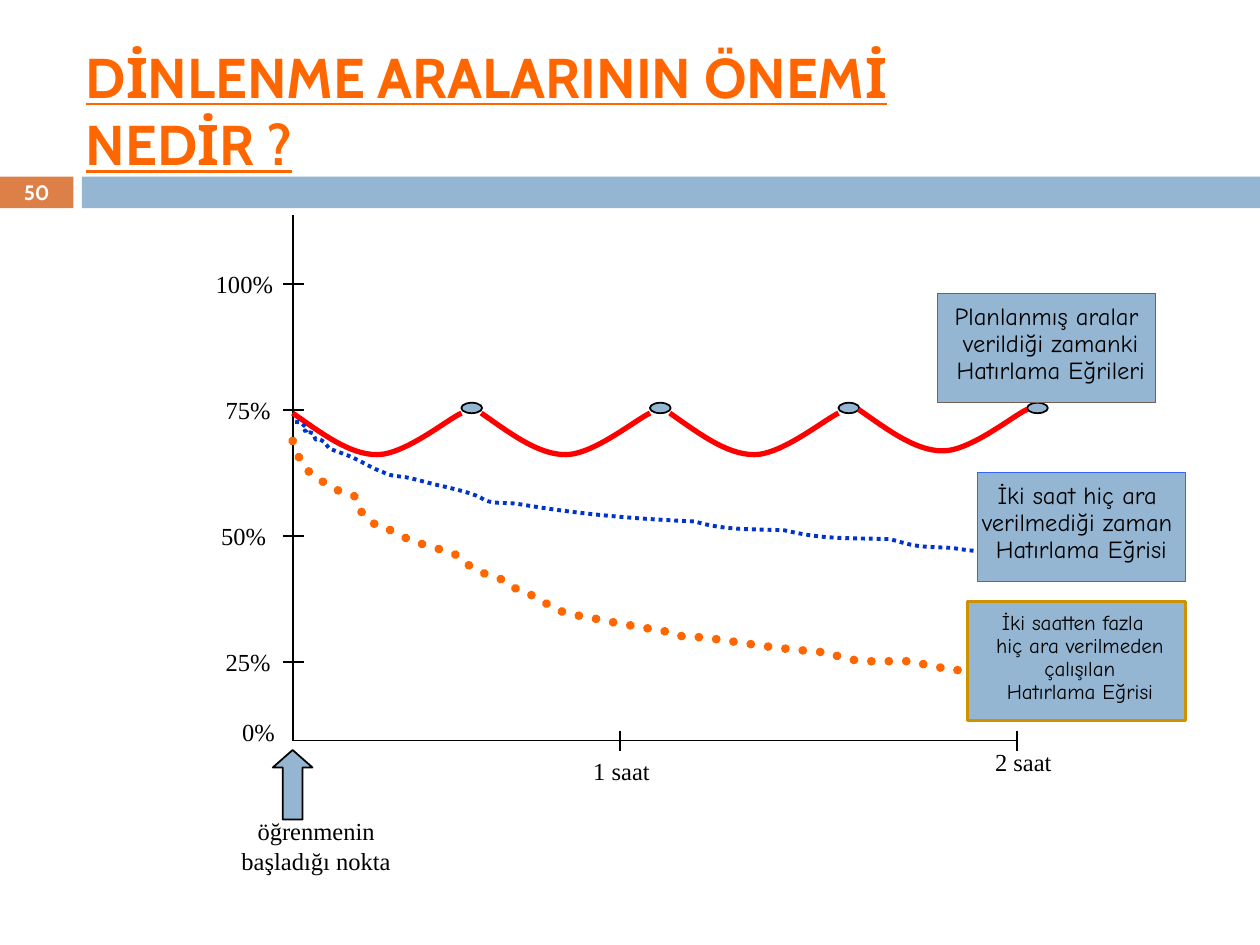
import pptx
import pptx.util
import pptx.dml.color
import pptx.enum.dml
import pptx.enum.shapes
import pptx.enum.text
import pptx.oxml.ns
import lxml.etree

Cm = pptx.util.Cm
Pt = pptx.util.Pt
qn = pptx.oxml.ns.qn
SHAPE = pptx.enum.shapes.MSO_SHAPE
ALIGN = pptx.enum.text.PP_ALIGN
ANCHOR = pptx.enum.text.MSO_ANCHOR

BLUE, BLACK, ORANGE = "94B6D2", "000000", "FF6600"
SERIF, HEADING, HAND = "Times New Roman", "Cabin", "Comic Neue"
UNIT = 0.0254  # cm per step of the curve grid

# Each curve: a start point, then cubic segments (two controls and an end point),
# counted in grid steps from the top of the vertical axis.
WAVE = [(0, 157), (23, 173, 45, 190, 67, 190), (89, 190, 123, 162, 134, 157)]
WAVE_STEP, WAVE_RISES = 149.67, (0, 0, 0, 3)
TWO_HOURS = [
    (2, 164), (4, 164, 7, 164, 8, 166), (19, 175, 0, 168, 16, 173),
    (21, 184, 15, 173, 25, 180), (27, 181, 27, 184, 29, 185),
    (33, 187, 43, 190, 47, 192), (56, 196, 63, 201, 72, 204),
    (77, 207, 84, 207, 90, 208), (100, 210, 109, 213, 119, 215),
    (127, 217, 141, 220, 149, 224), (151, 225, 153, 227, 155, 227),
    (163, 229, 170, 228, 178, 229), (225, 237, 270, 241, 319, 243),
    (342, 250, 363, 249, 390, 250), (421, 257, 432, 256, 474, 257),
    (495, 263, 495, 263, 523, 264), (544, 267, 532, 266, 559, 266)]
OVER_TWO_HOURS = [
    (0, 179), (6, 198, 12, 206, 29, 214), (32, 215, 34, 217, 37, 219),
    (41, 220, 49, 223, 49, 223), (52, 232, 53, 236, 61, 240),
    (68, 251, 70, 246, 80, 251), (96, 261, 114, 263, 131, 270),
    (141, 281, 153, 285, 166, 289), (174, 296, 179, 297, 188, 300),
    (190, 302, 192, 304, 194, 305), (198, 307, 206, 310, 206, 310),
    (215, 317, 224, 317, 235, 319), (257, 324, 278, 327, 300, 331),
    (316, 337, 301, 332, 333, 336), (356, 339, 378, 343, 402, 345),
    (410, 346, 425, 347, 425, 347), (449, 357, 462, 353, 494, 354),
    (503, 358, 513, 358, 523, 361), (535, 361, 559, 359, 559, 359)]


def rgb(value):
    return pptx.dml.color.RGBColor.from_string(value)


def write(shape, text, size, font, color=BLACK, align=ALIGN.LEFT, anchor=ANCHOR.TOP,
          wrap=True, bold=False, underline=False, line_spacing=None, before=0):
    frame = shape.text_frame
    frame.word_wrap = wrap
    frame.vertical_anchor = anchor
    for index, line in enumerate(text.split("\n")):
        paragraph = frame.add_paragraph() if index else frame.paragraphs[0]
        paragraph.alignment = align
        paragraph.line_spacing = line_spacing
        paragraph.space_before = Pt(before)
        run = paragraph.add_run()
        run.text = line
        run.font.size = Pt(size)
        run.font.name = font
        run.font.bold = bold
        run.font.underline = underline
        run.font.color.rgb = rgb(color)


def add_label(slide, text, left, top, width, height, **style):
    label = slide.shapes.add_textbox(Cm(left), Cm(top), Cm(width), Cm(height))
    write(label, text, **style)


def outline(shape, color, weight):
    shape.line.color.rgb = rgb(color)
    shape.line.width = Pt(weight)


def add_block(slide, kind, left, top, width, height, fill=BLUE, line=None, weight=1):
    block = slide.shapes.add_shape(kind, Cm(left), Cm(top), Cm(width), Cm(height))
    block.shadow.inherit = False
    block.fill.solid()
    block.fill.fore_color.rgb = rgb(fill)
    if line:
        outline(block, line, weight)
    else:
        block.line.fill.background()
    return block


def add_line(slide, x1, y1, x2, y2):
    line = slide.shapes.add_connector(pptx.enum.shapes.MSO_CONNECTOR.STRAIGHT,
                                      Cm(x1), Cm(y1), Cm(x2), Cm(y2))
    outline(line, BLACK, 1)
    lxml.etree.SubElement(line._element.spPr, qn("a:effectLst"))


def bend(shape):
    """Turn every three straight segments of a freeform into one cubic segment."""
    segments = list(shape._element.iter(qn("a:lnTo")))
    for first in range(0, len(segments), 3):
        cubic = lxml.etree.Element(qn("a:cubicBezTo"))
        segments[first].addprevious(cubic)
        for segment in segments[first:first + 3]:
            cubic.append(segment[0])
            segment.getparent().remove(segment)


def add_curve(slide, curve, left, top, color, weight, dotted=False, cap="flat"):
    points = [(Cm(left + part[i] * UNIT), Cm(top + part[i + 1] * UNIT))
              for part in curve for i in range(0, len(part), 2)]
    builder = slide.shapes.build_freeform(*points[0])
    builder.add_line_segments(points[1:], close=False)
    shape = builder.convert_to_shape()
    bend(shape)
    shape.shadow.inherit = False
    shape.fill.background()
    outline(shape, color, weight)
    shape.line._get_or_add_ln().set("cap", cap)
    if dotted:
        # ROUND_DOT is the member that stands for the sysDot preset
        shape.line.dash_style = pptx.enum.dml.MSO_LINE.ROUND_DOT


def add_header(slide, left, top, width, height):
    band_height, number_width, gap = 0.64, 1.48, 0.17
    band_top = top + height - band_height
    number = add_block(slide, SHAPE.RECTANGLE, left, band_top, number_width, band_height,
                       fill="DD8047")
    write(number, "50", size=11.9, font=HEADING, color="FFFFFF", bold=True,
          align=ALIGN.CENTER, anchor=ANCHOR.MIDDLE)
    band_left = left + number_width + gap
    add_block(slide, SHAPE.RECTANGLE, band_left, band_top,
              left + width - band_left, band_height)
    add_label(slide, "DİNLENME ARALARININ ÖNEMİ NEDİR ?", left + number_width, top + 0.01,
              20.8, height - band_height, size=32, font=HEADING, color=ORANGE,
              bold=True, underline=True, anchor=ANCHOR.MIDDLE)


def add_axes(slide, left, top, width, height):
    style = {"size": 14, "font": SERIF}
    bottom = top + height
    add_line(slide, left, top, left, bottom)
    add_line(slide, left, bottom, left + width, bottom)
    levels = [("100%", 1.8), ("75%", 1.6), ("50%", 1.69), ("25%", 1.6)]
    for index, (level, offset) in enumerate(levels):
        y = top + 1.38 + index * 2.54
        add_line(slide, left + 0.23, y, left - 0.2, y)
        add_label(slide, level, left - offset, y - 0.42, 1.7, 0.84, **style)
    add_label(slide, "0%", left - 1.27, bottom - 0.61, 1.27, 0.84, **style)
    for hour, x, offset, drop in [("1 saat", 6.6, 0.79, 0.19), ("2 saat", width, 0.69, 0)]:
        add_line(slide, left + x, bottom - 0.2, left + x, bottom + 0.2)
        add_label(slide, hour, left + x - offset, bottom + drop, 2.1, 0.84, **style)
    arrow = add_block(slide, SHAPE.UP_ARROW, left - 0.4, bottom + 0.19, 0.8, 1.4, line=BLACK)
    arrow.adjustments[1] = 0.44
    add_label(slide, "öğrenmenin başladığı nokta", left - 1.85, bottom + 1.4,
              4.65, 1.45, align=ALIGN.CENTER, **style)


def add_curves(slide, left, top):
    for index, rise in enumerate(WAVE_RISES):
        wave_left = left + index * WAVE_STEP * UNIT
        add_block(slide, SHAPE.OVAL, wave_left + 3.4, top + 3.78, 0.42, 0.21, line=BLACK)
        add_curve(slide, WAVE, wave_left, top - rise * UNIT, "FF0000", 3)
    add_curve(slide, TWO_HOURS, left, top, "0033CC", 2.25, dotted=True)
    add_curve(slide, OVER_TWO_HOURS, left, top, ORANGE, 5, dotted=True, cap="rnd")


def add_legend_box(slide, text, left, top, width, height, line, weight=0.75, size=14):
    box = add_block(slide, SHAPE.RECTANGLE, left, top, width, height,
                    line=line, weight=weight)
    write(box, text, size=size, font=HAND, align=ALIGN.CENTER, anchor=ANCHOR.MIDDLE,
          wrap=False, line_spacing=0.5, before=size / 2)


def main():
    deck = pptx.Presentation()
    deck.slide_width, deck.slide_height = Cm(25.4), Cm(19.05)
    slide = deck.slides.add_slide(deck.slide_layouts[6])
    add_header(slide, 0, 0.84, 25.4, 3.36)
    axis_left, axis_top = 5.9, 4.34
    add_axes(slide, axis_left, axis_top, 14.6, 10.59)
    add_curves(slide, axis_left, axis_top)
    add_legend_box(slide, "İki saat hiç ara \nverilmediği zaman \nHatırlama Eğrisi",
                   19.7, 9.53, 4.2, 2.2, line="3366FF")
    add_legend_box(slide, "Planlanmış aralar\n verildiği zamanki\n Hatırlama Eğrileri",
                   18.9, 5.92, 4.4, 2.2, line="775F55")
    add_legend_box(slide, "İki saatten fazla \n hiç ara verilmeden\n çalışılan\n Hatırlama Eğrisi",
                   19.5, 12.13, 4.4, 2.4, line="CC9200", weight=2, size=12)
    deck.save("out.pptx")


if __name__ == "__main__":
    main()
